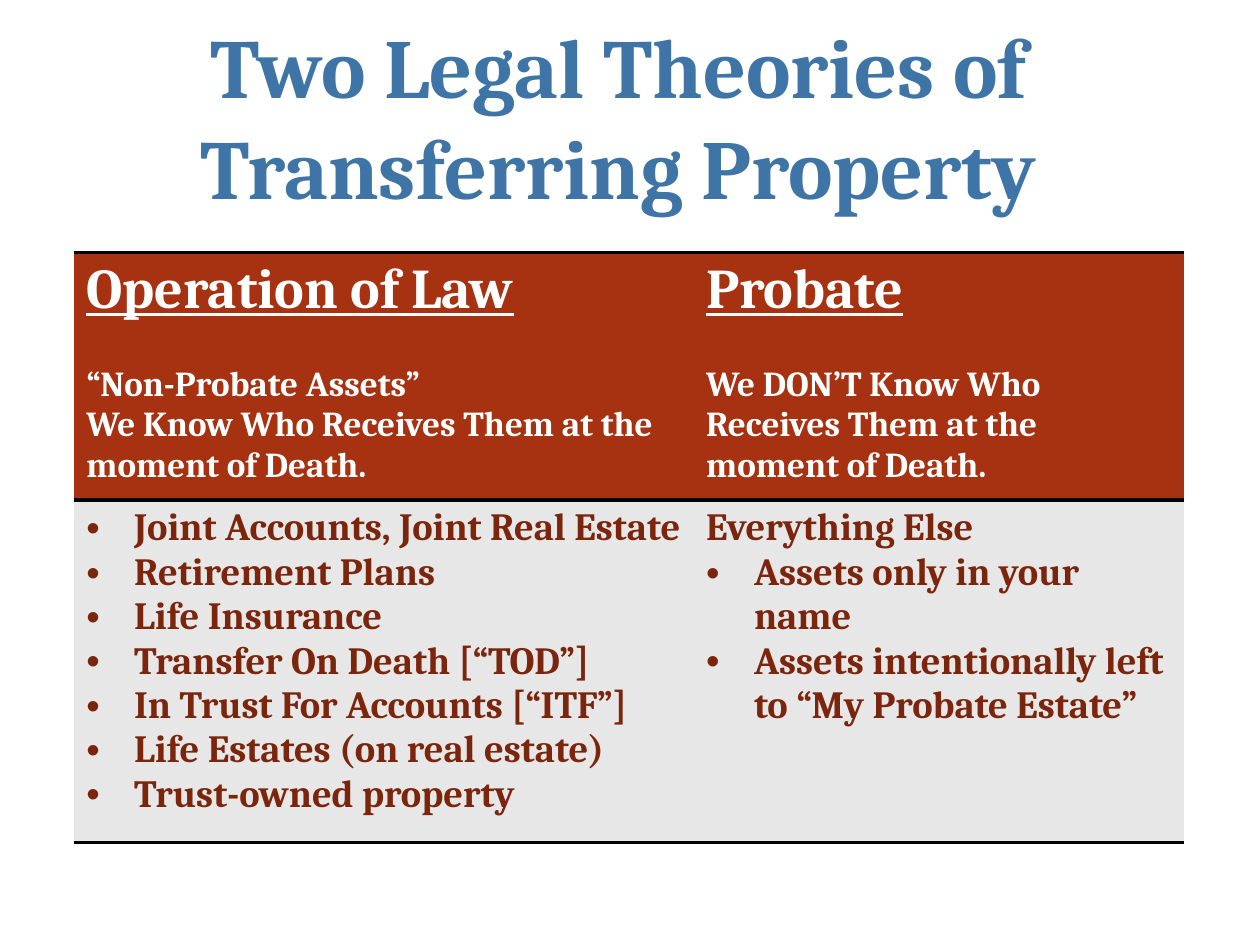
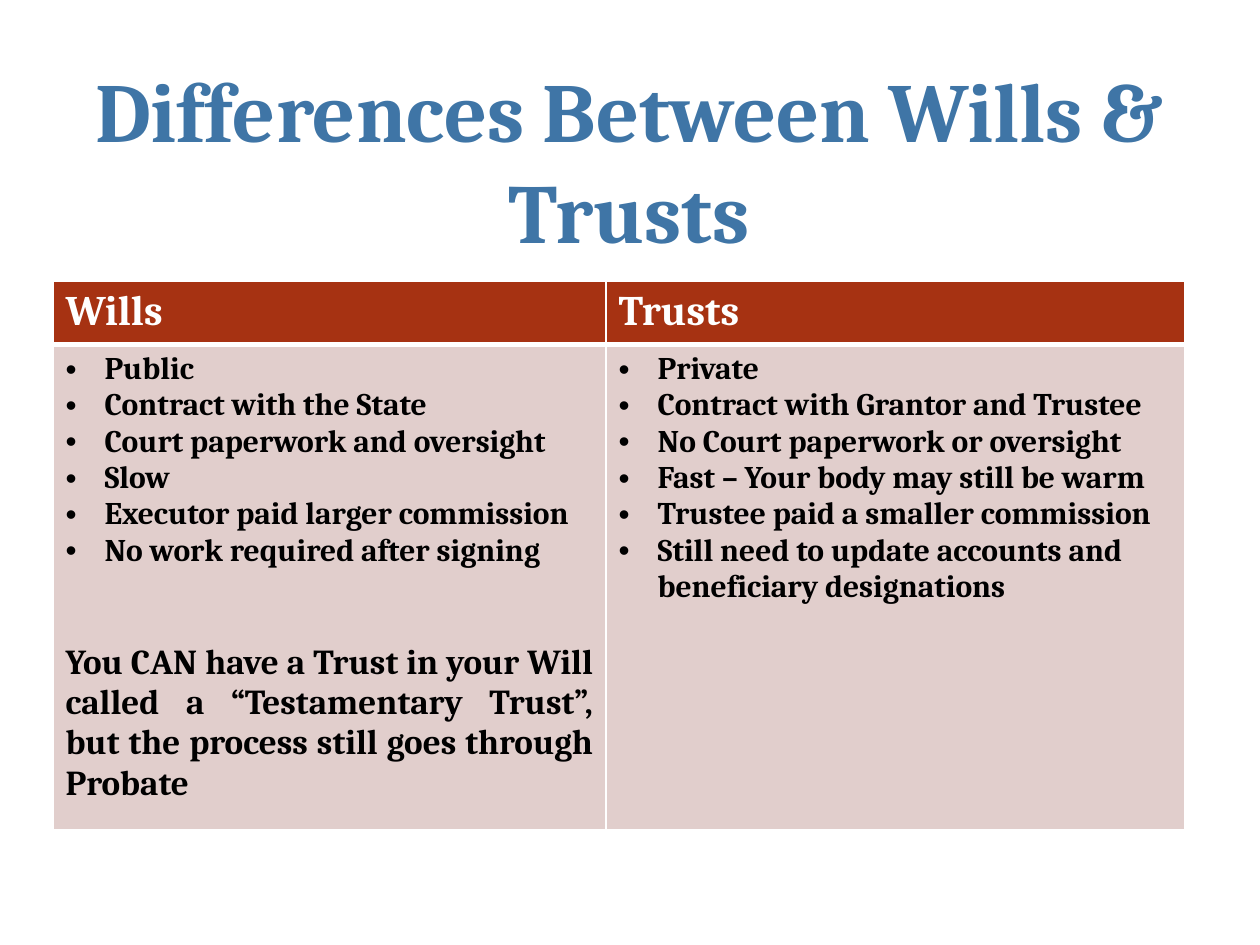
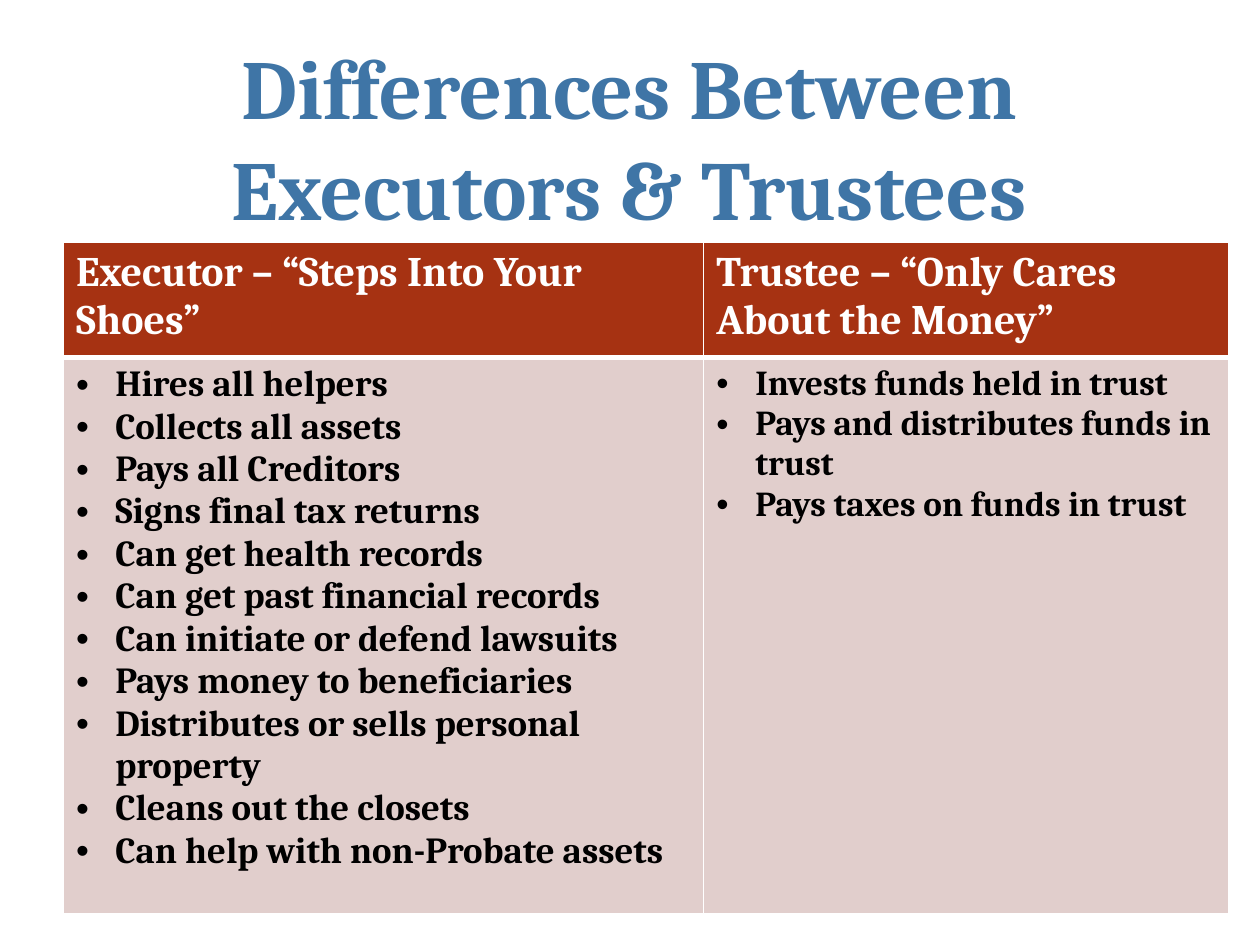
from dataclasses import dataclass

from lxml.etree import SubElement
from pptx import Presentation
from pptx.dml.color import RGBColor
from pptx.enum.text import MSO_ANCHOR as Anchor, PP_ALIGN as Align
from pptx.oxml.ns import qn
from pptx.util import Emu, Inches, Pt

SLIDE_WIDTH, SLIDE_HEIGHT = Inches(10), Inches(7.5)


@dataclass(frozen=True)
class Theme:
    font: str = "Cambria"
    title: str = "3F75A6"
    header: str = "A63212"
    white: str = "FFFFFF"
    black: str = "000000"
    rust: str = "7C250D"
    grey: str = "E7E7E7"
    rose: str = "E1CECC"
    title_size: int = 48
    heading_size: int = 32
    header_size: int = 24
    list_size: int = 22
    duty_size: int = 21
    note_size: int = 20
    trait_size: int = 18


THEME = Theme()


@dataclass(frozen=True)
class Line:
    text: str
    size: int
    indent: float = 0
    underline: bool = False
    before: int = 0
    align: Align = Align.LEFT


@dataclass(frozen=True)
class Look:
    body_fill: str
    body_text: str
    sides: tuple
    top: tuple
    middle: tuple
    bottom: tuple


RULED = Look(THEME.grey, THEME.rust, None, (THEME.black, 2),
             (THEME.black, 2), (THEME.black, 2))
BOXED = Look(THEME.rose, THEME.black, (THEME.white, 1), (THEME.white, 1),
             (THEME.white, 3), (THEME.white, 1))


def across(percent):
    return Emu(round(SLIDE_WIDTH * percent / 100))


def down(percent):
    return Emu(round(SLIDE_HEIGHT * percent / 100))


def bullets(size, indent, *texts):
    return [Line(text, size, indent) for text in texts]


def write(frame, lines, color):
    frame.word_wrap = True
    for number, line in enumerate(lines):
        paragraph = frame.paragraphs[0] if number == 0 else frame.add_paragraph()
        paragraph.text = line.text
        paragraph.alignment = line.align
        if line.before:
            paragraph.space_before = Pt(line.before)
        if line.indent:
            properties = paragraph._p.get_or_add_pPr()
            properties.set("marL", str(Inches(line.indent)))
            properties.set("indent", str(-Inches(line.indent)))
            SubElement(properties, qn("a:buFont")).set("typeface", "Arial")
            SubElement(properties, qn("a:buChar")).set("char", "•")
        font = paragraph.font
        font.name, font.size, font.bold = THEME.font, Pt(line.size), True
        font.underline = line.underline
        font.color.rgb = RGBColor.from_string(color)


def add_title(slide, text, left, top, width, height):
    title = slide.shapes.add_textbox(
        across(left), down(top), across(width), down(height))
    title.text_frame.vertical_anchor = Anchor.MIDDLE
    write(title.text_frame,
          [Line(text, THEME.title_size, align=Align.CENTER)], THEME.title)


def set_border(cell, side, border):
    color, points = border or (None, 0)
    edge = SubElement(cell._tc.get_or_add_tcPr(), qn(f"a:ln{side}"))
    edge.set("w", str(Pt(points)))
    if border:
        solid = SubElement(edge, qn("a:solidFill"))
        SubElement(solid, qn("a:srgbClr")).set("val", color)
    else:
        SubElement(edge, qn("a:noFill"))


def add_comparison(slide, left, top, columns, rows, look, contents):
    table = slide.shapes.add_table(
        len(rows), len(columns), across(left), down(top),
        across(sum(columns)), down(sum(rows))).table
    table.horz_banding = False
    for column, width in zip(table.columns, columns):
        column.width = across(width)
    for row, height in zip(table.rows, rows):
        row.height = down(height)
    styles = ((THEME.header, THEME.white, look.top, look.middle),
              (look.body_fill, look.body_text, look.middle, look.bottom))
    for row, cells, (fill, color, above, below) in zip(table.rows, contents, styles):
        for cell, lines in zip(row.cells, cells):
            for side, border in zip("LRTB", (look.sides, look.sides, above, below)):
                set_border(cell, side, border)
            cell.fill.solid()
            cell.fill.fore_color.rgb = RGBColor.from_string(fill)
            write(cell.text_frame, lines, color)


def theory_heading(name, *notes):
    heading = Line(name, THEME.heading_size, underline=True)
    return [heading] + [Line(note, THEME.note_size, before=0 if number else 24)
                        for number, note in enumerate(notes)]


def build_theories(slide):
    add_title(slide, "Two Legal Theories of Transferring Property",
              4.2, 4.4, 89.8, 15.6)
    headings = (
        theory_heading("Operation of Law", "“Non-Probate Assets”",
                       "We Know Who Receives Them at the moment of Death."),
        theory_heading("Probate",
                       "We DON’T Know Who Receives Them at the moment of Death."))
    assets = (
        bullets(THEME.list_size, 0.38,
                "Joint Accounts, Joint Real Estate",
                "Retirement Plans",
                "Life Insurance",
                "Transfer On Death [“TOD”]",
                "In Trust For Accounts [“ITF”]",
                "Life Estates (on real estate)",
                "Trust-owned property"),
        [Line("Everything Else", THEME.list_size)]
        + bullets(THEME.list_size, 0.38,
                  "Assets only in your name",
                  "Assets intentionally left to “My Probate Estate”"))
    add_comparison(slide, 5.85, 26.67, (49.2, 38.95), (25.2, 36.2),
                   RULED, (headings, assets))


def build_wills_and_trusts(slide):
    add_title(slide, "Differences Between Wills & Trusts", 6, 6.4, 87.9, 21)
    headings = ([Line("Wills", THEME.header_size)],
                [Line("Trusts", THEME.header_size)])
    testamentary = Line(
        "You CAN have a Trust in your Will called a “Testamentary Trust”, "
        "but the process still goes through Probate",
        THEME.note_size, before=42, align=Align.JUSTIFY)
    traits = (
        bullets(THEME.trait_size, 0.31,
                "Public",
                "Contract with the State",
                "Court paperwork and oversight",
                "Slow",
                "Executor paid larger commission",
                "No work required after signing") + [testamentary],
        bullets(THEME.trait_size, 0.31,
                "Private",
                "Contract with Grantor and Trustee",
                "No Court paperwork or oversight",
                "Fast – Your body may still be warm",
                "Trustee paid a smaller commission",
                "Still need to update accounts and beneficiary designations"))
    add_comparison(slide, 4.2, 29.8, (43.9, 45.9), (6.67, 51.3),
                   BOXED, (headings, traits))


def build_executors_and_trustees(slide):
    add_title(slide, "Differences Between Executors & Trustees", 6, 4.4, 87.9, 20)
    headings = (
        [Line("Executor – “Steps Into Your Shoes”", THEME.header_size)],
        [Line("Trustee – “Only Cares About the Money”", THEME.header_size)])
    duties = (
        bullets(THEME.duty_size, 0.31,
                "Hires all helpers",
                "Collects all assets",
                "Pays all Creditors",
                "Signs final tax returns",
                "Can get health records",
                "Can get past financial records",
                "Can initiate or defend lawsuits",
                "Pays money to beneficiaries",
                "Distributes or sells personal property",
                "Cleans out the closets",
                "Can help with non-Probate assets"),
        bullets(THEME.note_size, 0.31,
                "Invests funds held in trust",
                "Pays and distributes funds in trust",
                "Pays taxes on funds in trust"))
    add_comparison(slide, 5.05, 25.6, (50.8, 41.7), (12.2, 58.9),
                   BOXED, (headings, duties))


def main():
    deck = Presentation()
    deck.slide_width, deck.slide_height = SLIDE_WIDTH, SLIDE_HEIGHT
    blank = deck.slide_layouts[6]
    for build in (build_theories, build_wills_and_trusts,
                  build_executors_and_trustees):
        build(deck.slides.add_slide(blank))
    deck.save("out.pptx")


if __name__ == "__main__":
    main()
